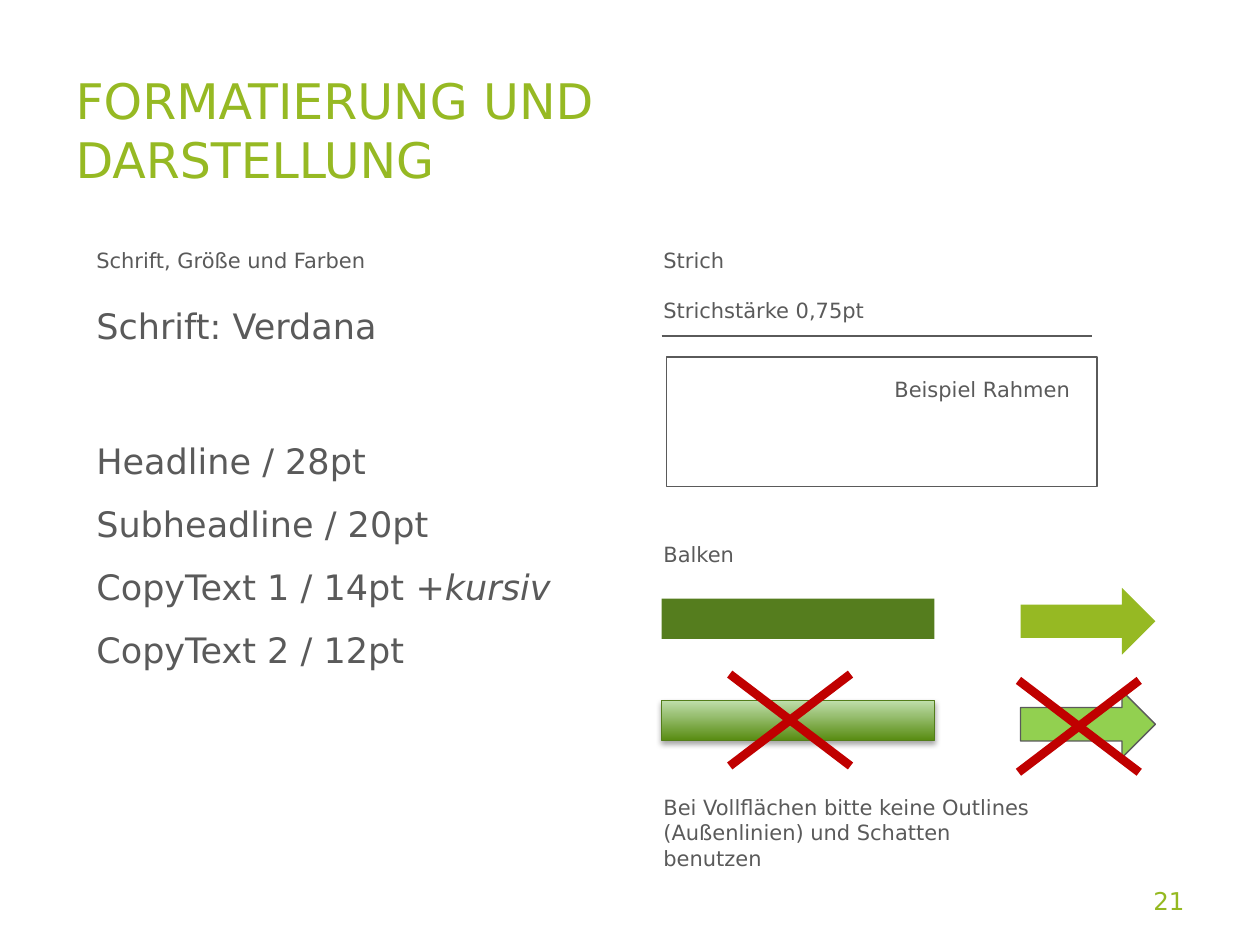
import pptx
import pptx.util
import pptx.dml.color
import pptx.enum.text
import pptx.enum.shapes
import pptx.oxml

Pt = pptx.util.Pt
Text = pptx.enum.text
Kind = pptx.enum.shapes.MSO_SHAPE
WIDE, HIGH = 10, 7.5
COLS = 120

THEME = {
    "font": "DejaVu Sans",
    "lime": "96B923", "page": "95B921", "gray": "5A5A5A", "green": "557D1E",
    "edge": "537D1B", "red": "C00000", "bright": "92D050",
    "dark": "578B10", "light": "BFDEAB",
    "head": 28, "sub": 20, "num": 14, "copy": 12,
    "thin": 0.75, "thick": 5,
}

TITLE = ((6, 6, 76.3, 12.6), "FORMATIERUNG UND DARSTELLUNG")
NUMBER = ((86, 83.4, 28, 4.8), "21")
FONTS = [
    ([("Schrift, Größe und Farben", {})], "copy", 0, 12),
    ([("Schrift: Verdana", {})], "sub", 6, 12),
    ([("Headline / 28pt", {})], "sub", 41.3, 6),
    ([("Subheadline / 20pt", {})], "sub", 6, 6),
    ([("CopyText 1 / 14pt ", {}), ("+kursiv", {"italic": True})], "sub", 6, 6),
    ([("CopyText 2 / 12pt", {})], "sub", 6, 6),
]
NOTES = [
    ((62, 23, 44, 15.4), ["Strich", "Strichstärke 0,75pt"]),
    ((62, 75.1, 38, 8.5),
     ["Bei Vollflächen bitte keine Outlines (Außenlinien) und Schatten benutzen"]),
    ((84, 35.3, 20, 3.6), ["Beispiel Rahmen"]),
    ((62, 51, 44, 3.6), ["Balken"]),
]
BAR, ARROW = (26, 3.84), (12.84, 6.36)
SHAPES = [
    (Kind.RECTANGLE, (63, 57, *BAR), "green", None),
    (Kind.RECTANGLE, (63, 66.72, *BAR), ("dark", "light"), "edge"),
    (Kind.RECTANGLE, (63.5, 34, 41, 12.36), None, "gray"),
    (Kind.RIGHT_ARROW, (97.2, 56, *ARROW), "lime", None),
    (Kind.RIGHT_ARROW, (97.2, 65.8, *ARROW), "bright", "gray"),
]
RULE = (63, 32, 104, 32)
CROSS = (11.5, 8.75)
CROSSES = [(69.5, 64.2), (97, 64.8)]
NS = 'xmlns:a="http://schemas.openxmlformats.org/drawingml/2006/main"'
SHADOW = (f'<a:effectLst {NS}><a:outerShdw blurRad="{Pt(3.1)}" dist="{Pt(1.8)}"'
          ' dir="5400000" rotWithShape="0"><a:srgbClr val="000000">'
          '<a:alpha val="35000"/></a:srgbClr></a:outerShdw></a:effectLst>')


def grid(*cells):
    return [pptx.util.Inches(n * WIDE / COLS) for n in cells]


def tint(name):
    return pptx.dml.color.RGBColor.from_string(THEME[name])


def apply(item, form):
    for key, value in form.items():
        setattr(item, key, value)


def write(para, runs, size, color, form):
    apply(para, form)
    for words, style in runs:
        run = para.add_run()
        run.text = words
        apply(run.font, {"name": THEME["font"], "size": Pt(THEME[size]), **style})
        run.font.color.rgb = tint(color)


def fill_text(shape, paras, color, anchor=Text.MSO_ANCHOR.TOP):
    frame = shape.text_frame
    apply(frame, {"word_wrap": True, "auto_size": Text.MSO_AUTO_SIZE.NONE,
                  "vertical_anchor": anchor})
    for i, (runs, size, form) in enumerate(paras):
        para = frame.add_paragraph() if i else frame.paragraphs[0]
        write(para, runs, size, color, form)


def box(cells, *args):
    fill_text(slide.shapes.add_textbox(*grid(*cells)), *args)


def stroke(cells, color, width):
    line = slide.shapes.add_connector(
        pptx.enum.shapes.MSO_CONNECTOR.STRAIGHT, *grid(*cells))
    line.line.color.rgb = tint(color)
    line.line.width = Pt(THEME[width])
    line._element.spPr.append(pptx.oxml.parse_xml(f"<a:effectLst {NS}/>"))


def draw(kind, cells, fill, edge):
    shape = slide.shapes.add_shape(kind, *grid(*cells))
    shape.shadow.inherit = False
    if isinstance(fill, tuple):
        shape.fill.gradient()
        shape.fill.gradient_angle = 90
        for stop, name in zip(shape.fill.gradient_stops, fill):
            stop.color.rgb = tint(name)
    elif fill:
        shape.fill.solid()
        shape.fill.fore_color.rgb = tint(fill)
    else:
        shape.fill.background()
    if edge:
        shape.line.color.rgb = tint(edge)
        shape.line.width = Pt(THEME["thin"])
    else:
        shape.line.fill.background()
    if isinstance(fill, tuple):
        props = shape._element.spPr
        props.replace(props[-1], pptx.oxml.parse_xml(SHADOW))


deck = pptx.Presentation()
apply(deck, {"slide_width": pptx.util.Inches(WIDE),
             "slide_height": pptx.util.Inches(HIGH)})
slide = deck.slides.add_slide(deck.slide_layouts[5])
left = {"alignment": Text.PP_ALIGN.LEFT}
right = {"alignment": Text.PP_ALIGN.RIGHT}
mid = Text.MSO_ANCHOR.MIDDLE

cells, words = TITLE
title = slide.shapes.title
apply(title, dict(zip(("left", "top", "width", "height"), grid(*cells))))
fill_text(title, [([(words, {})], "head", left)], "lime", mid)
cells, words = NUMBER
box(cells, [([(words, {})], "num", right)], "page", mid)
box((8, 23, 49, 57.4),
    [(runs, size, {"space_before": Pt(up), "space_after": Pt(down)})
     for runs, size, up, down in FONTS], "gray")
for cells, lines in NOTES:
    box(cells, [([(words, {})], "copy", {"space_before": Pt(14 if i else 0)})
                for i, words in enumerate(lines)], "gray")

stroke(RULE, "gray", "thin")
for item in SHAPES:
    draw(*item)
wide, high = CROSS
for x, y in CROSSES:
    stroke((x, y + high, x + wide, y), "red", "thick")
    stroke((x + wide, y + high, x, y), "red", "thick")

deck.save("out.pptx")
